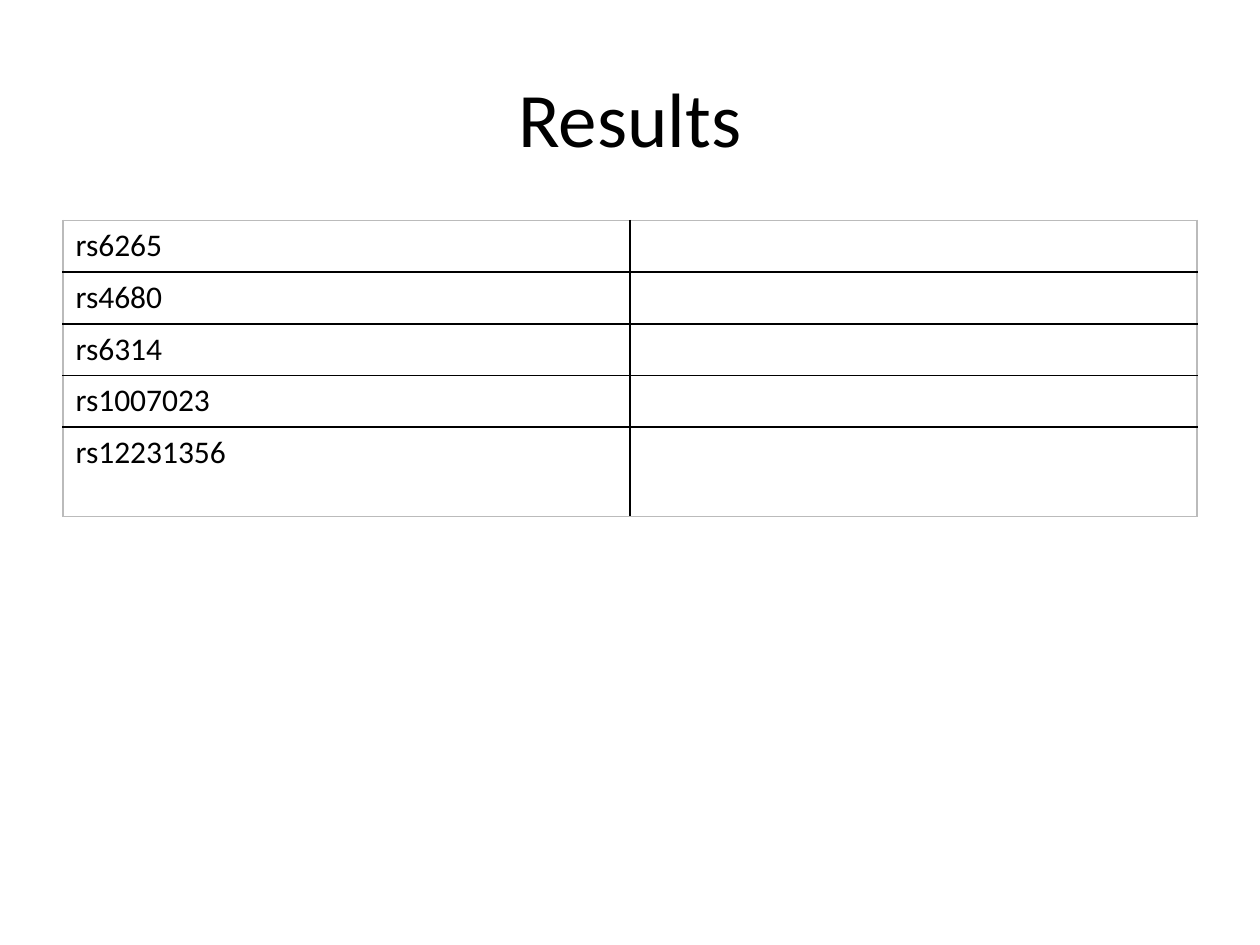
from dataclasses import dataclass

from lxml import etree
from pptx import Presentation
from pptx.dml.color import RGBColor
from pptx.enum.text import MSO_ANCHOR, PP_ALIGN
from pptx.oxml.ns import qn
from pptx.util import Inches, Pt

CENTER, LEFT = PP_ALIGN.CENTER, PP_ALIGN.LEFT
MIDDLE = MSO_ANCHOR.MIDDLE
BLANK_LAYOUT = 6


@dataclass(frozen=True)
class Theme:
    font: str = "Calibri"
    ink: str = "000000"
    edge: str = "BBBBBB"
    paper: str = "FFFFFF"
    title_size: int = 44
    body_size: int = 18
    rule_width: int = 1


THEME = Theme()
MARKERS = ["rs6265", "rs4680", "rs6314", "rs1007023", "rs12231356"]
ROW_HEIGHT, LAST_ROW_HEIGHT = 0.41, 0.71
COLUMN_COUNT = 2


def write(para, text, size, align):
    para.alignment = align
    span = para.add_run()
    span.text = text
    formats = {"name": THEME.font, "size": Pt(size), "bold": False}
    for name, value in formats.items():
        setattr(span.font, name, value)
    span.font.color.rgb = RGBColor.from_string(THEME.ink)


def add_border(cell, side, color):
    line = etree.SubElement(cell._tc.get_or_add_tcPr(), qn(f"a:ln{side}"),
                            w=str(Pt(THEME.rule_width)))
    fill = etree.SubElement(line, qn("a:solidFill"))
    etree.SubElement(fill, qn("a:srgbClr"), val=color)


def add_title(page, box, text):
    frame = page.shapes.add_textbox(*map(Inches, box)).text_frame
    frame.word_wrap = True
    frame.vertical_anchor = MIDDLE
    write(frame.paragraphs[0], text, THEME.title_size, CENTER)


def add_marker_table(page, box, markers):
    row_count = len(markers)
    table = page.shapes.add_table(row_count, COLUMN_COUNT, *map(Inches, box)).table
    table.first_row = table.horz_banding = False

    # Grid: equal columns, with a taller last row
    for column in table.columns:
        column.width = Inches(box[2] / COLUMN_COUNT)
    for row in table.rows:
        row.height = Inches(ROW_HEIGHT)
    table.rows[row_count - 1].height = Inches(LAST_ROW_HEIGHT)

    # Cells: dark inner rules, pale outer edge
    for r, marker in enumerate(markers):
        for c in range(COLUMN_COUNT):
            cell = table.cell(r, c)
            outer = {"L": c == 0, "R": c == COLUMN_COUNT - 1,
                     "T": r == 0, "B": r == row_count - 1}
            for side, is_outer in outer.items():
                add_border(cell, side, THEME.edge if is_outer else THEME.ink)
            cell.fill.solid()
            cell.fill.fore_color.rgb = RGBColor.from_string(THEME.paper)
        write(table.cell(r, 0).text_frame.paragraphs[0], marker,
              THEME.body_size, LEFT)


def main():
    deck = Presentation()
    deck.slide_width, deck.slide_height = Inches(10), Inches(7.5)
    page = deck.slides.add_slide(deck.slide_layouts[BLANK_LAYOUT])

    margin, width = 0.5, 9
    table_height = ROW_HEIGHT * (len(MARKERS) - 1) + LAST_ROW_HEIGHT
    add_title(page, (margin, 0.3, width, 1.25), "Results")
    add_marker_table(page, (margin, 1.75, width, table_height), MARKERS)
    deck.save("out.pptx")


if __name__ == "__main__":
    main()
